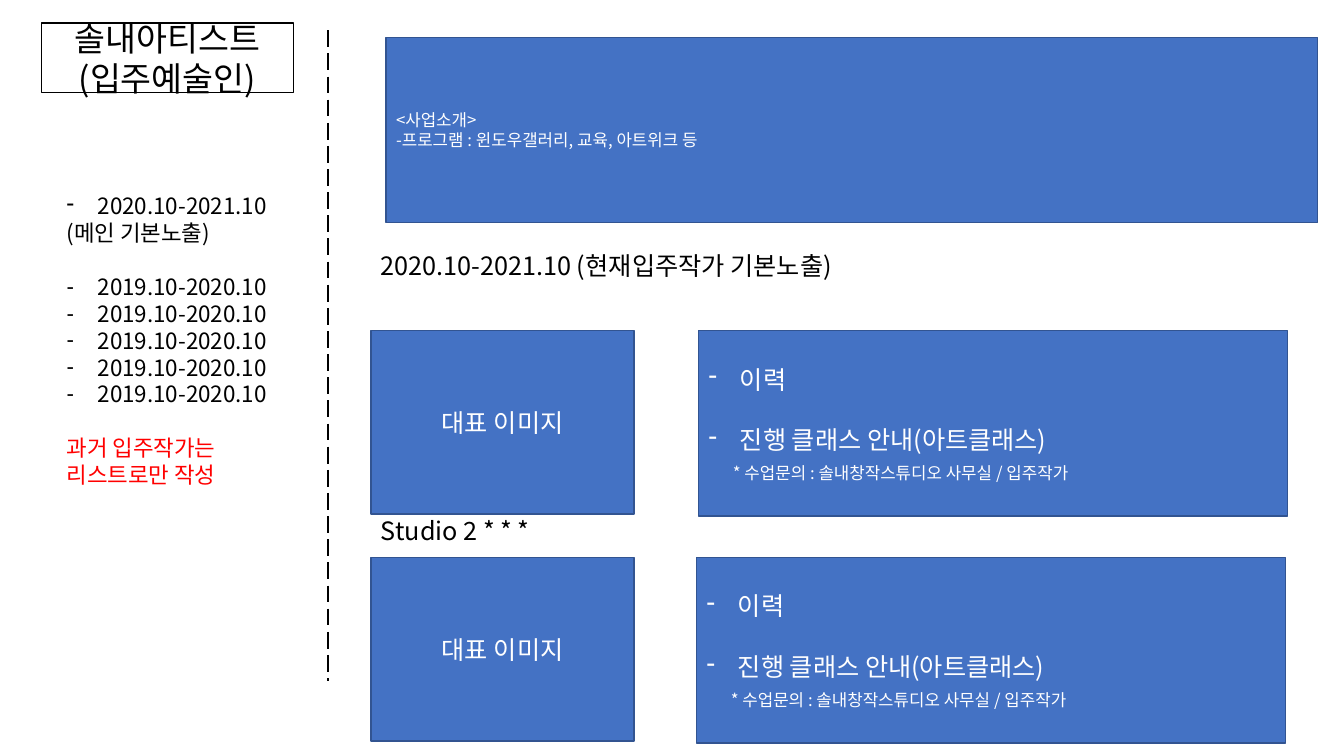
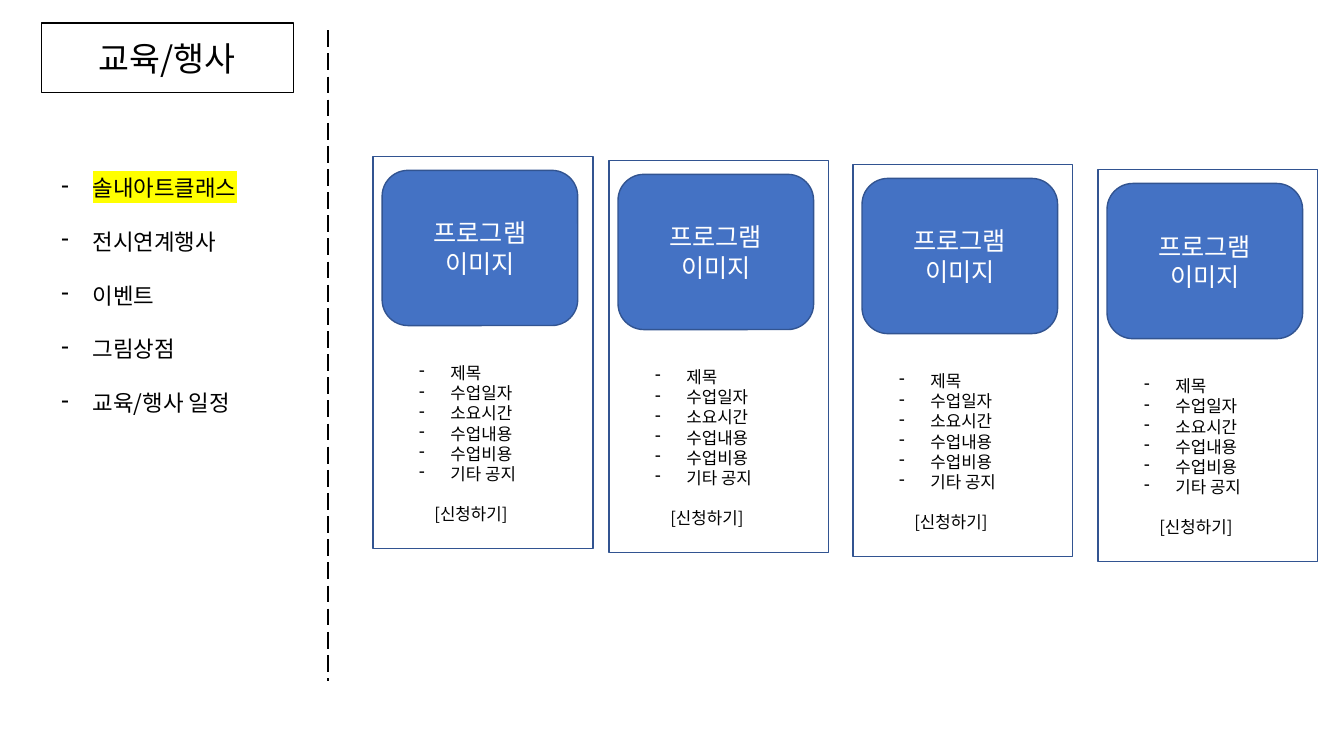
from lxml.etree import SubElement
from pptx import Presentation
from pptx.dml.color import RGBColor
from pptx.enum.dml import MSO_LINE
from pptx.enum.shapes import MSO_CONNECTOR, MSO_SHAPE
from pptx.enum.text import MSO_ANCHOR, MSO_AUTO_SIZE, PP_ALIGN
from pptx.oxml.ns import qn
from pptx.util import Emu, Pt

PX = 9144  # 100 px to the inch
FONT = "Noto Sans CJK KR"
LEADING = 1.2
COLORS = {"ink": "000000", "paper": "FFFFFF", "box": "4472C4",
          "edge": "325491", "alert": "FF0000", "mark": "FFFF00"}

# Content: each line is its text and its own format
ARTIST_TITLE = ["솔내아티스트", "(입주예술인)"]
ARTIST_MENU = [
    ("2020.10-2021.10", {"bullet": True}),
    ("(메인 기본노출)", {}),
    ("2019.10-2020.10", {"bullet": True, "gap": 1}),
    *[("2019.10-2020.10", {"bullet": True})] * 4,
    ("과거 입주작가는", {"color": "alert", "gap": 1}),
    ("리스트로만 작성", {"color": "alert"}),
]
INTRO = ["<사업소개>", "-프로그램 : 윈도우갤러리, 교육, 아트위크 등"]
STUDIO_IMAGE = ["대표 이미지"]
STUDIO_DETAILS = [
    ("이력", {"bullet": True}),
    ("진행 클래스 안내(아트클래스)", {"bullet": True, "gap": 1}),
    ("* 수업문의 : 솔내창작스튜디오 사무실 / 입주작가",
     {"size": 12, "indent": 24, "gap": 0.4}),
]
# Heading, its top, top of the boxes, left of the details
STUDIOS = [
    ("2020.10-2021.10 (현재입주작가 기본노출)", 243, 328, 693),
    ("Studio 2 * * *", 506, 553, 691),
]

EVENT_TITLE = ["교육/행사"]
EVENT_MENU = [
    ("솔내아트클래스", {"bullet": True, "mark": "mark"}),
    *[(item, {"bullet": True, "gap": 1})
      for item in ("전시연계행사", "이벤트", "그림상점", "교육/행사 일정")],
]
PROGRAM_IMAGE = ["프로그램", "이미지"]
PROGRAM_FACTS = [
    *[(fact, {"bullet": True}) for fact in
      ("제목", "수업일자", "소요시간", "수업내용", "수업비용", "기타 공지")],
    ("[신청하기]", {"indent": 15, "gap": 1}),
]
PROGRAM_CORNERS = [(370, 155), (604, 159), (846, 163), (1089, 168)]


def rgb(name):
    return RGBColor.from_string(COLORS[name])


def px(*lengths):
    return [Emu(length * PX) for length in lengths]


def add_line(paragraph, text, size=18, color="ink", align=PP_ALIGN.LEFT,
             bullet=False, indent=0, gap=0, mark=None):
    """Write one line; gap is the space above it, in lines."""
    paragraph.alignment = align
    paragraph.line_spacing = Pt(size * LEADING)
    paragraph.space_before = Pt(size * LEADING * gap)
    paragraph.space_after = Pt(0)
    properties = paragraph._p.get_or_add_pPr()
    hang = 31 if bullet else 0
    properties.set("marL", str((indent + hang) * PX))
    properties.set("indent", str(-hang * PX))
    if bullet:
        SubElement(properties, qn("a:buFontTx"))
        SubElement(properties, qn("a:buChar"), char="-")
    else:
        SubElement(properties, qn("a:buNone"))

    run = paragraph.add_run()
    run.text = text
    run.font.size = Pt(size)
    run.font.color.rgb = rgb(color)
    run.font.name = FONT
    run_properties = run.font._element
    SubElement(run_properties, qn("a:ea"), typeface=FONT)
    if mark:
        highlight = SubElement(run_properties, qn("a:highlight"))
        SubElement(highlight, qn("a:srgbClr"), val=COLORS[mark])
        run_properties.find(qn("a:latin")).addprevious(highlight)


def write(holder, lines, anchor=MSO_ANCHOR.TOP, **style):
    """Fill a shape with lines; a line's own format overrides the style."""
    frame = holder.text_frame
    frame.word_wrap = True
    frame.auto_size = MSO_AUTO_SIZE.NONE
    frame.vertical_anchor = anchor
    for number, line in enumerate(lines):
        text, own = (line, {}) if isinstance(line, str) else line
        paragraph = frame.add_paragraph() if number else frame.paragraphs[0]
        add_line(paragraph, text, **{**style, **own})


def place(holder, left, top, width, height):
    holder.left, holder.top, holder.width, holder.height = px(
        left, top, width, height)


def add_text(slide, area, lines, **style):
    write(slide.shapes.add_textbox(*px(*area)), lines, **style)


def add_box(slide, area, lines=(), kind=MSO_SHAPE.RECTANGLE, filled=True, **style):
    box = slide.shapes.add_shape(kind, *px(*area))
    box.shadow.inherit = False
    if filled:
        box.fill.solid()
        box.fill.fore_color.rgb = rgb("box")
    else:
        box.fill.background()
    box.line.color.rgb = rgb("edge")
    box.line.width = Pt(1)
    write(box, lines, anchor=MSO_ANCHOR.MIDDLE, color="paper", **style)


def add_page(deck, title_lines, menu_lines, menu_area):
    """Start a slide with its framed title, side menu and divider."""
    slide = deck.slides.add_slide(deck.slide_layouts[1])
    title, menu = slide.shapes.title, slide.placeholders[1]
    place(title, 41, 23, 250, 69)
    title.line.color.rgb = rgb("ink")
    title.line.width = Pt(1)
    write(title, title_lines, anchor=MSO_ANCHOR.MIDDLE, size=24,
          align=PP_ALIGN.CENTER)
    place(menu, *menu_area)
    write(menu, menu_lines, size=16)

    divider = slide.shapes.add_connector(
        MSO_CONNECTOR.STRAIGHT, *px(325, 30, 325, 676))
    divider.line.color.rgb = rgb("ink")
    divider.line.width = Pt(1.5)
    divider.line.dash_style = MSO_LINE.LONG_DASH
    SubElement(divider._element.spPr, qn("a:effectLst"))
    return slide


def build_artists(deck):
    slide = add_page(deck, ARTIST_TITLE, ARTIST_MENU, (56, 186, 220, 306))
    add_box(slide, (383, 37, 924, 184), INTRO, size=12)
    for heading, heading_top, top, details_left in STUDIOS:
        add_text(slide, (368, heading_top, 494, 40), [heading])
        add_box(slide, (368, top, 261, 182), STUDIO_IMAGE, align=PP_ALIGN.CENTER)
        add_box(slide, (details_left, top, 584, 184), STUDIO_DETAILS)


def build_events(deck):
    slide = add_page(deck, EVENT_TITLE, EVENT_MENU, (51, 168, 209, 279))
    for left, top in PROGRAM_CORNERS:
        add_box(slide, (left, top, 218, 389), filled=False)
        add_box(slide, (left + 9, top + 14, 194, 154), PROGRAM_IMAGE,
                kind=MSO_SHAPE.ROUNDED_RECTANGLE, align=PP_ALIGN.CENTER)
        add_text(slide, (left + 36, top + 200, 126, 131), PROGRAM_FACTS, size=12)


def main():
    deck = Presentation()
    deck.slide_width, deck.slide_height = px(1333, 750)
    build_artists(deck)
    build_events(deck)
    deck.save("out.pptx")


if __name__ == "__main__":
    main()
